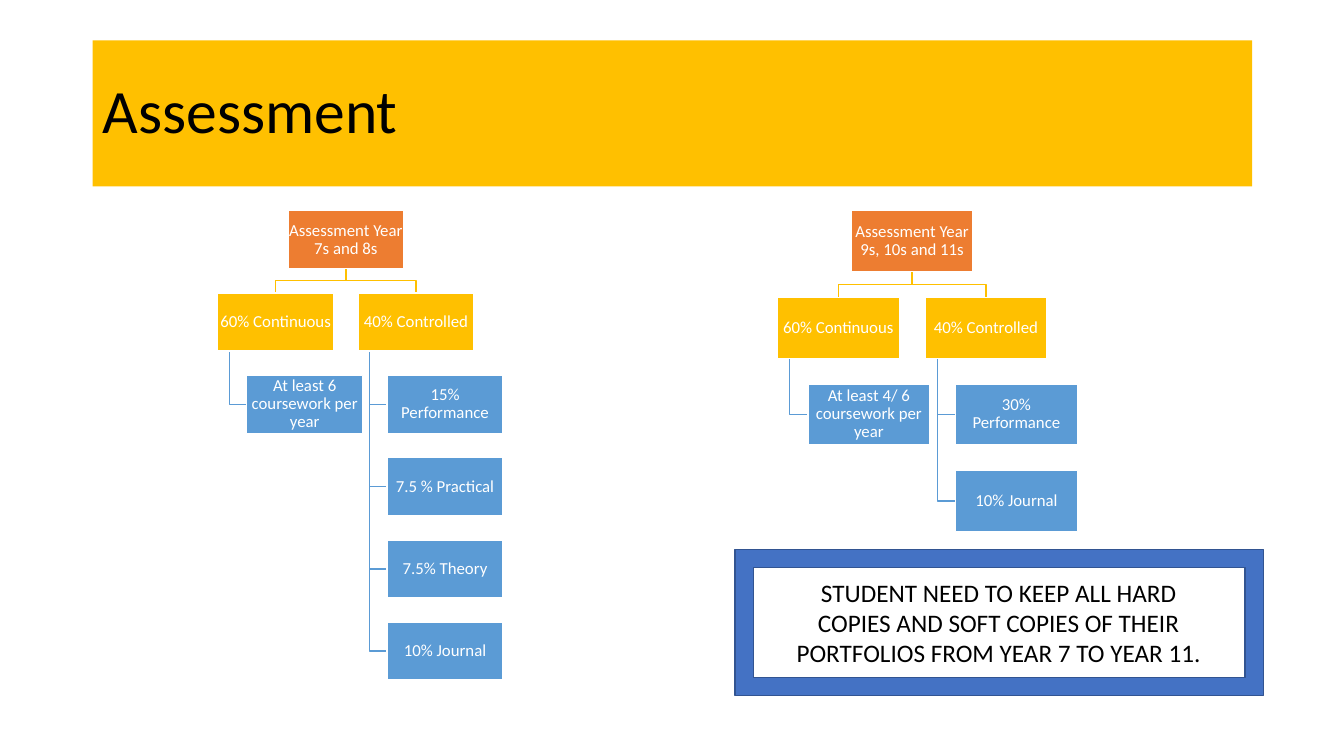
import pptx
import pptx.util
from pptx.dml.color import RGBColor
from pptx.enum.shapes import MSO_SHAPE
from pptx.enum.text import MSO_ANCHOR, PP_ALIGN
from pptx.util import Inches

# Content
TITLE = "Assessment"
NOTE = ("STUDENT NEED TO KEEP ALL HARD COPIES AND SOFT COPIES OF THEIR "
        "PORTFOLIOS FROM YEAR 7 TO YEAR 11.")
# Each tree: left edge, box width, root label, branches with their leaves
TREES = [
    (2.16, 1.15, "Assessment Year 7s and 8s", [
        ("60% Continuous", ["At least 6 coursework per year"]),
        ("40% Controlled", ["15% Performance", "7.5 % Practical",
                            "7.5% Theory", "10% Journal"]),
    ]),
    (7.71, 1.21, "Assessment Year 9s, 10s and 11s", [
        ("60% Continuous", ["At least 4/ 6 coursework per year"]),
        ("40% Controlled", ["30% Performance", "10% Journal"]),
    ]),
]
TREE_TOP = 2.09

# Tree proportions, as shares of the box width
BOX_HEIGHT = 0.5
COLUMN_PITCH = 1.21
ROW_PITCH = 0.71
LEAF_INDENT = 0.25
STEM_INDENT = 0.1

FONT = "Calibri"
BLACK = RGBColor(0x00, 0x00, 0x00)
WHITE = RGBColor(0xFF, 0xFF, 0xFF)
GOLD = RGBColor(0xFF, 0xC0, 0x00)
ORANGE = RGBColor(0xED, 0x7D, 0x31)
SKY = RGBColor(0x5B, 0x9B, 0xD5)
BLUE = RGBColor(0x44, 0x72, 0xC4)
NAVY = RGBColor(0x32, 0x54, 0x91)


def add_block(shapes, kind, x, y, w, h, fill, line=None):
    sp = shapes.add_shape(kind, Inches(x), Inches(y), Inches(w), Inches(h))
    sp.shadow.inherit = False
    sp.fill.solid()
    sp.fill.fore_color.rgb = fill
    if line is None:
        sp.line.fill.background()
    else:
        sp.line.color.rgb = line
        sp.line.width = pptx.util.Pt(1)
    return sp


def set_text(sp, text, size, color, align, spacing=None, margin=None):
    tf = sp.text_frame
    tf.word_wrap = True
    tf.vertical_anchor = MSO_ANCHOR.MIDDLE
    if margin is not None:
        tf.margin_left = tf.margin_right = Inches(margin)
        tf.margin_top = tf.margin_bottom = Inches(margin)
    p = tf.paragraphs[0]
    p.text = text
    p.alignment = align
    p.line_spacing = spacing
    p.font.name = FONT
    p.font.size = pptx.util.Pt(size)
    p.font.color.rgb = color


def add_node(shapes, x, y, w, fill, label):
    sp = add_block(shapes, MSO_SHAPE.RECTANGLE, x, y, w, w * BOX_HEIGHT,
                   fill, WHITE)
    set_text(sp, label, 12, WHITE, PP_ALIGN.CENTER, 0.9, 0.01)


def add_link(shapes, points, color):
    points = [(Inches(x), Inches(y)) for x, y in points]
    builder = shapes.build_freeform(*points[0])
    builder.add_line_segments(points[1:], close=False)
    sp = builder.convert_to_shape()
    sp.shadow.inherit = False
    sp.fill.background()
    sp.line.color.rgb = color
    sp.line.width = pptx.util.Pt(1)


def add_tree(shapes, left, w, root, branches):
    h, row = w * BOX_HEIGHT, w * ROW_PITCH
    root_x = left + w * COLUMN_PITCH / 2
    root_mid, root_bottom = root_x + w / 2, TREE_TOP + h
    branch_y = TREE_TOP + row
    bar_y = (root_bottom + branch_y) / 2
    nodes, links = [(root_x, TREE_TOP, w, ORANGE, root)], []

    for col, (branch, leaves) in enumerate(branches):
        x = left + col * w * COLUMN_PITCH
        mid, stem, leaf_x = x + w / 2, x + w * STEM_INDENT, x + w * LEAF_INDENT
        nodes.append((x, branch_y, w, GOLD, branch))
        links.append(([(root_mid, root_bottom), (root_mid, bar_y),
                       (mid, bar_y), (mid, branch_y)], GOLD))
        for i, leaf in enumerate(leaves, 1):
            y = branch_y + i * row
            nodes.append((leaf_x, y, w, SKY, leaf))
            links.append(([(stem, branch_y + h), (stem, y + h / 2),
                           (leaf_x, y + h / 2)], SKY))

    # Links lie behind the boxes
    for link in links:
        add_link(shapes, *link)
    for node in nodes:
        add_node(shapes, *node)


def main():
    prs = pptx.Presentation()
    prs.slide_width, prs.slide_height = Inches(13.33), Inches(7.5)
    s = prs.slides.add_slide(prs.slide_layouts[6])

    # Title band
    band = add_block(s.shapes, MSO_SHAPE.RECTANGLE, 0.92, 0.4, 11.5, 1.45, GOLD)
    set_text(band, TITLE, 44, BLACK, PP_ALIGN.LEFT, 0.9)

    # Assessment trees
    for tree in TREES:
        add_tree(s.shapes.add_group_shape().shapes, *tree)

    # Framed note
    add_block(s.shapes, MSO_SHAPE.FRAME, 7.29, 5.45, 5.24, 1.45, BLUE, NAVY)
    note = s.shapes.add_textbox(Inches(7.72), Inches(5.67),
                                Inches(4.37), Inches(1.01))
    set_text(note, NOTE, 18, BLACK, PP_ALIGN.CENTER)

    prs.save("out.pptx")


if __name__ == "__main__":
    main()
